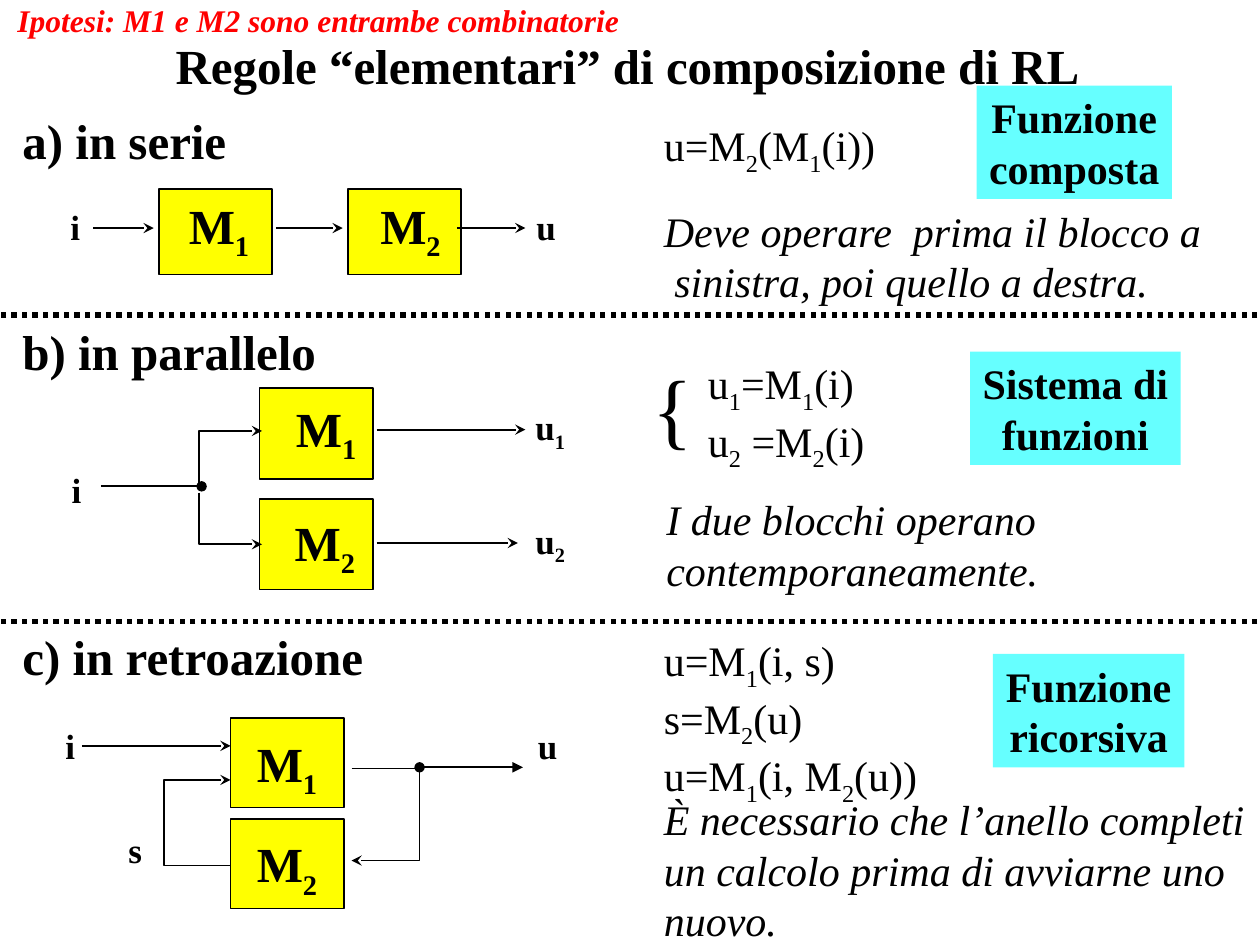
from dataclasses import dataclass

import pptx
import pptx.dml.color
import pptx.enum.dml
import pptx.enum.shapes
import pptx.enum.text
import pptx.oxml.ns
import pptx.oxml.xmlchemy
import pptx.util
from lxml import etree

Inches = pptx.util.Inches
Pt = pptx.util.Pt
RGBColor = pptx.dml.color.RGBColor
qn = pptx.oxml.ns.qn
RECTANGLE = pptx.enum.shapes.MSO_SHAPE.RECTANGLE
STRAIGHT = pptx.enum.shapes.MSO_CONNECTOR.STRAIGHT
DOTTED = pptx.enum.dml.MSO_LINE.ROUND_DOT
CENTER = pptx.enum.text.PP_ALIGN.CENTER
MIDDLE = pptx.enum.text.MSO_ANCHOR.MIDDLE
TOP = pptx.enum.text.MSO_ANCHOR.TOP
NO_FIT = pptx.enum.text.MSO_AUTO_SIZE.NONE

BLACK = RGBColor(0x00, 0x00, 0x00)
RED = RGBColor(0xFF, 0x00, 0x00)
YELLOW = RGBColor(0xFF, 0xFF, 0x00)
CYAN = RGBColor(0x66, 0xFF, 0xFF)
FONT = "Times New Roman"


@dataclass
class Box:
    """An area in inches; parts inside it are placed from its corner."""
    left: float
    top: float
    width: float
    height: float

    def inside(self, left, top, width, height):
        return Box(self.left + left, self.top + top, width, height)

    def point(self, across, down):
        return Inches(self.left + across), Inches(self.top + down)

    def lengths(self):
        return [Inches(n) for n in (self.left, self.top, self.width, self.height)]


def write(frame, text, size=24, bold=False, italic=False, color=BLACK,
          align=None, anchor=TOP, wrap=False):
    """Fill a text frame; an underscore makes the next character a subscript."""
    frame.auto_size = NO_FIT
    frame.word_wrap = wrap
    frame.vertical_anchor = anchor
    for number, line in enumerate(text.split("\n")):
        para = frame.paragraphs[0] if number == 0 else frame.add_paragraph()
        para.alignment = align
        first, *rest = line.split("_")
        pieces = [(first, False)]
        for part in rest:
            pieces += [(part[0], True), (part[1:], False)]
        for piece, lowered in pieces:
            if not piece:
                continue
            span = para.add_run()
            span.text = piece
            span.font.name = FONT
            span.font.size = Pt(size)
            span.font.bold = bold
            span.font.italic = italic
            span.font.color.rgb = color
            if lowered:
                span.font._element.set("baseline", "-25000")


def add_text(page, box, text, **style):
    write(page.shapes.add_textbox(*box.lengths()).text_frame, text, **style)


def add_rectangle(page, box, fill, outlined=False):
    shape = page.shapes.add_shape(RECTANGLE, *box.lengths())
    shape.shadow.inherit = False
    shape.fill.solid()
    shape.fill.fore_color.rgb = fill
    if outlined:
        shape.line.color.rgb = BLACK
        shape.line.width = Pt(1)
    else:
        shape.line.fill.background()
    return shape


def add_block(page, box, name, indent, drop):
    """A yellow network block, its name shifted from the block's corner."""
    add_rectangle(page, box, YELLOW, outlined=True)
    add_text(page, box.inside(indent, drop, 0.7, 0.57), name, size=28, bold=True)


def add_callout(page, box, text):
    shape = add_rectangle(page, box, CYAN)
    write(shape.text_frame, text, bold=True, align=CENTER)


def add_signal(page, box, left, top, name, width=0.34):
    add_text(page, box.inside(left, top, width, 0.43), name, size=20, bold=True)


def add_heading(page, box, text, width):
    add_text(page, box.inside(0.08, 0, width, 0.57), text, size=28, bold=True)


def style_line(shape, head=None, tail=None, width=1, dash=None):
    shape.line.color.rgb = BLACK
    shape.line.width = Pt(width)
    if dash:
        shape.line.dash_style = dash
    outline = shape._element.spPr.find(qn("a:ln"))
    for tag, kind in (("a:headEnd", head), ("a:tailEnd", tail)):
        if kind:
            etree.SubElement(outline, qn(tag)).set("type", kind)


def add_line(page, box, start, end, **style):
    line = page.shapes.add_connector(STRAIGHT, *box.point(*start), *box.point(*end))
    style_line(line, **style)
    etree.SubElement(line._element.spPr, qn("a:effectLst"))


def add_bent_arrow(page, box, *corners):
    first, *rest = [box.point(*corner) for corner in corners]
    builder = page.shapes.build_freeform(*first)
    builder.add_line_segments(rest, close=False)
    shape = builder.convert_to_shape()
    shape.shadow.inherit = False
    shape.fill.background()
    style_line(shape, tail="stealth")


def add_title(page, box):
    title = page.shapes.title
    title.left, title.top, title.width, title.height = box.lengths()
    write(title.text_frame, "Regole “elementari” di composizione di RL",
          size=28, bold=True, align=CENTER, anchor=MIDDLE, wrap=True)


def add_series(page, box):
    add_heading(page, box, "a) in serie", 1.82)
    for left, name, indent in ((1.26, "M_1", 0.14), (2.76, "M_2", 0.16)):
        add_block(page, box.inside(left, 0.67, 0.9, 0.68), name, indent, 0)
    for start, end in ((0.74, 1.22), (2.19, 2.72), (3.63, 4.17)):
        add_line(page, box, (start, 0.98), (end, 0.98), tail="stealth")
    add_signal(page, box, 0.46, 0.75, "i", 0.28)
    add_signal(page, box, 4.16, 0.75, "u")
    add_text(page, box.inside(5.17, 0.07, 1.99, 0.5), "u=M_2(M_1(i))")
    add_text(page, box.inside(5.17, 0.75, 4.48, 0.9),
             "Deve operare  prima il blocco a\n sinistra, poi quello a destra.",
             italic=True)
    add_callout(page, box.inside(7.75, -0.15, 1.55, 0.9), "Funzione\ncomposta")


def add_parallel(page, box):
    add_heading(page, box, "b) in parallelo", 2.53)
    add_block(page, box.inside(2.06, 0.58, 0.9, 0.72), "M_1", 0.19, 0.03)
    add_block(page, box.inside(2.06, 1.46, 0.9, 0.72), "M_2", 0.18, 0.06)
    add_line(page, box, (0.8, 1.36), (1.6, 1.36), tail="oval")
    add_line(page, box, (2.99, 0.91), (4.17, 0.91), tail="stealth")
    add_line(page, box, (2.99, 1.81), (4.11, 1.81), tail="stealth")
    for start, end in ((1.33, 0.92), (1.41, 1.82)):
        add_bent_arrow(page, box, (1.58, start), (1.58, end), (2.08, end))
    add_signal(page, box, 0.47, 1.17, "i", 0.28)
    add_signal(page, box, 4.15, 0.67, "u_1", 0.45)
    add_signal(page, box, 4.15, 1.57, "u_2", 0.45)
    add_text(page, box.inside(5.08, 0.27, 0.6, 0.9), "{", size=48, wrap=True)
    add_text(page, box.inside(5.52, 0.29, 1.56, 0.9), "u_1=M_1(i)\nu_2 =M_2(i)")
    add_text(page, box.inside(5.19, 1.37, 4.46, 0.9),
             "I due blocchi operano\ncontemporaneamente.", italic=True, wrap=True)
    add_callout(page, box.inside(7.7, 0.29, 1.67, 0.9), "Sistema di\nfunzioni")


def add_feedback(page, box):
    add_heading(page, box, "c) in retroazione", 2.92)
    for top, name in ((0.78, "M_1"), (1.58, "M_2")):
        add_block(page, box.inside(1.83, top, 0.9, 0.71), name, 0.11, 0.07)
    add_line(page, box, (0.65, 1), (1.83, 1), tail="stealth")
    add_line(page, box, (2.79, 1.18), (3.33, 1.18))
    add_line(page, box, (3.33, 1.17), (4.15, 1.17), head="oval", tail="triangle")
    add_bent_arrow(page, box, (3.33, 1.18), (3.33, 1.91), (2.79, 1.91))
    add_bent_arrow(page, box, (1.83, 1.95), (1.3, 1.95), (1.3, 1.27), (1.83, 1.27))
    add_signal(page, box, 0.42, 0.78, "i", 0.28)
    add_signal(page, box, 4.17, 0.78, "u", 0.36)
    add_signal(page, box, 0.92, 1.61, "s", 0.31)
    add_text(page, box.inside(5.17, 0.07, 2.24, 1.3),
             "u=M_1(i, s)\ns=M_2(u)\nu=M_1(i, M_2(u))")
    add_text(page, box.inside(5.17, 1.33, 4.81, 1.3),
             "È necessario che l’anello completi\nun calcolo prima di avviarne uno\nnuovo.",
             italic=True, wrap=True)
    add_callout(page, box.inside(7.88, 0.27, 1.52, 0.9), "Funzione\nricorsiva")


def main():
    deck = pptx.Presentation()
    deck.slide_width, deck.slide_height = Inches(10), Inches(7.5)
    page = deck.slides.add_slide(deck.slide_layouts[5])
    whole = Box(0, 0, 10, 7.5)
    add_title(page, whole.inside(0.6, 0.23, 8.76, 0.57))
    for height in (2.5, 4.93):
        add_line(page, whole, (9.98, height), (0, height), width=3, dash=DOTTED)
    add_series(page, whole.inside(0, 0.83, 10, 1.67))
    add_parallel(page, whole.inside(0, 2.5, 10, 2.42))
    add_feedback(page, whole.inside(0, 4.92, 10, 2.58))
    add_text(page, whole.inside(0.04, -0.04, 5.19, 0.4),
             "Ipotesi: M1 e M2 sono entrambe combinatorie",
             size=18, bold=True, italic=True, color=RED)
    deck.save("out.pptx")


if __name__ == "__main__":
    main()
